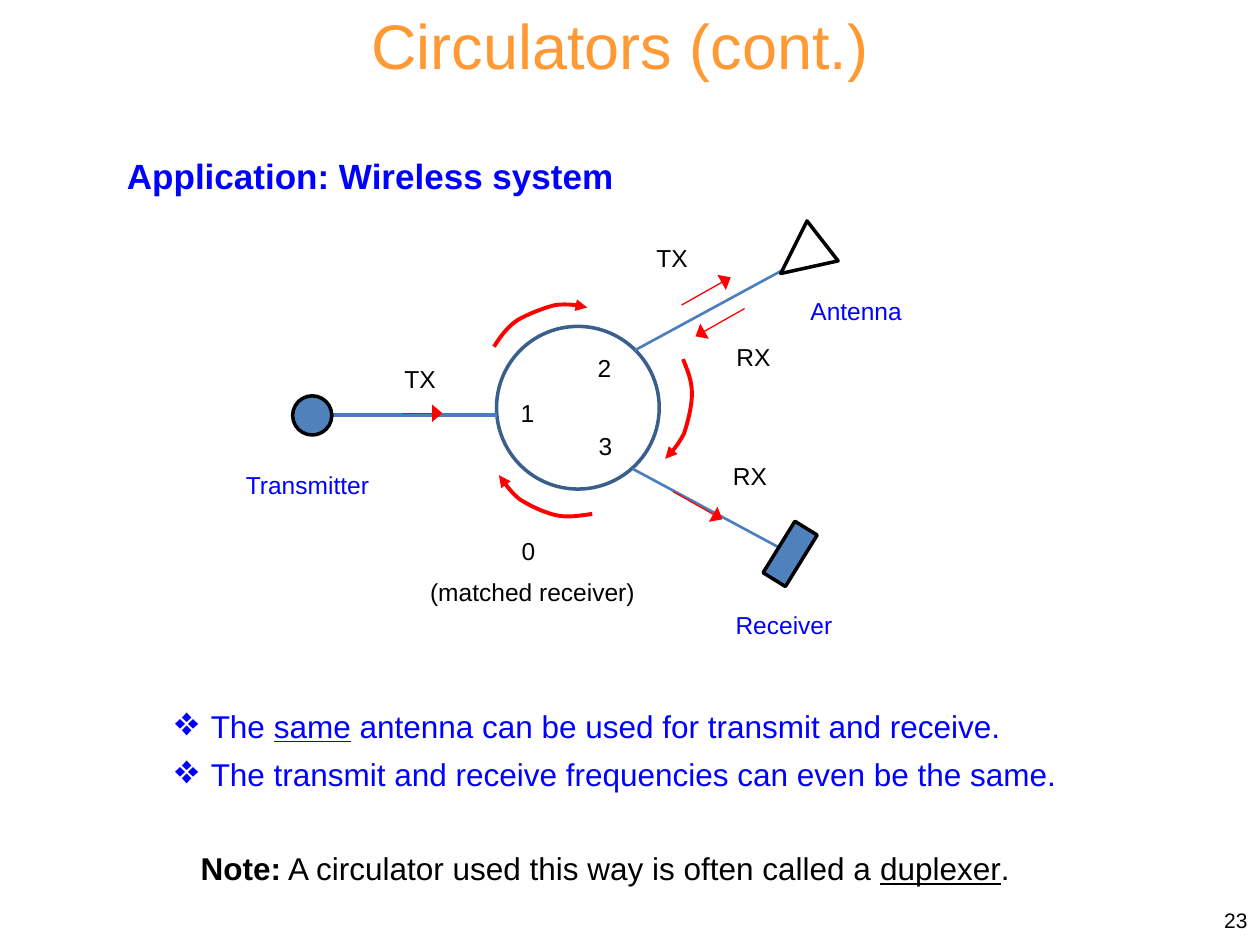
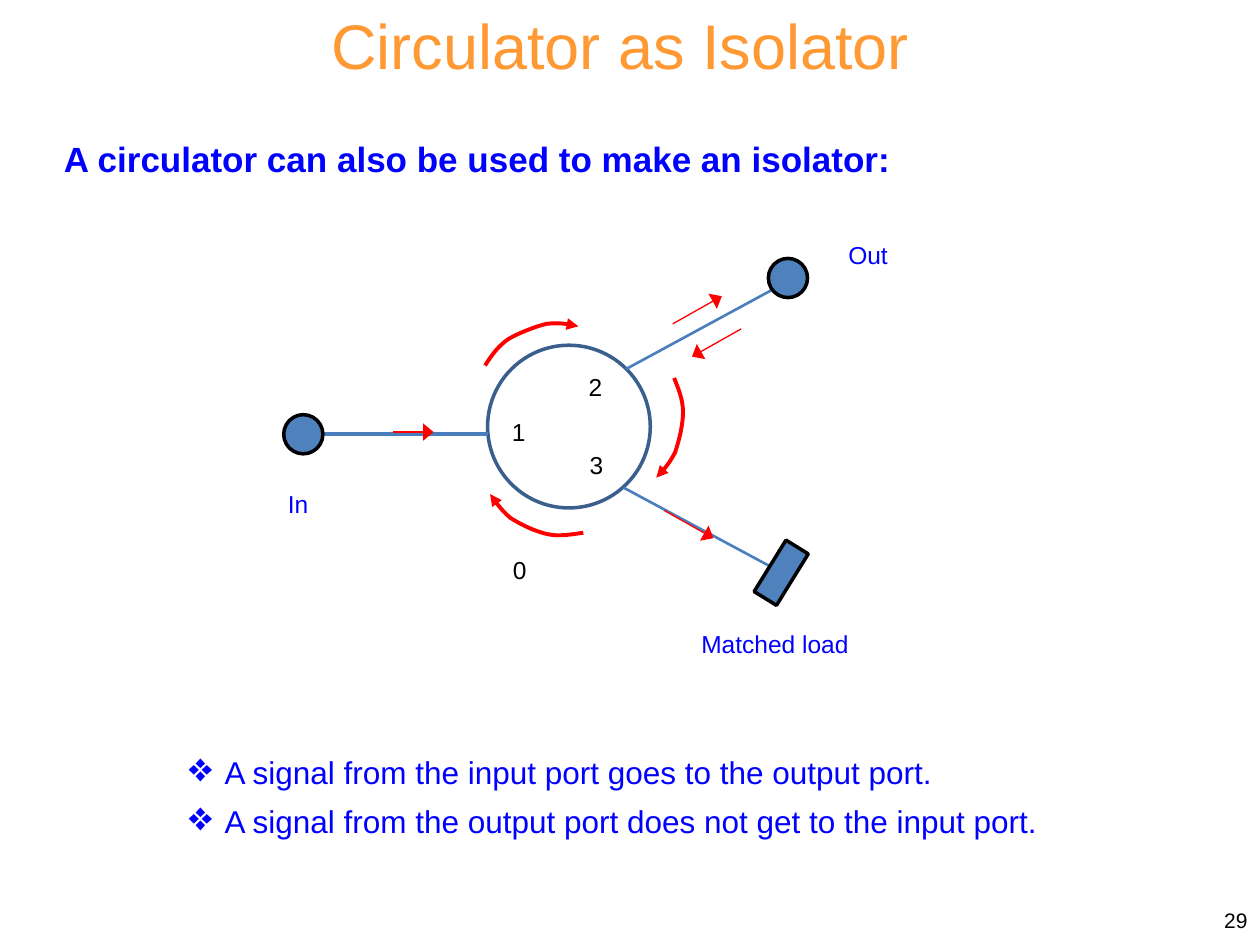
from lxml import etree
from pptx import Presentation
from pptx.dml.color import RGBColor
from pptx.enum.shapes import MSO_CONNECTOR, MSO_SHAPE
from pptx.enum.text import MSO_ANCHOR, MSO_AUTO_SIZE, PP_ALIGN
from pptx.oxml.ns import qn
from pptx.util import Cm, Pt

STRAIGHT = MSO_CONNECTOR.STRAIGHT
ELLIPSE = MSO_SHAPE.OVAL
RECTANGLE = MSO_SHAPE.RECTANGLE
TRIANGLE = MSO_SHAPE.ISOSCELES_TRIANGLE
LEFT, CENTER, RIGHT = PP_ALIGN.LEFT, PP_ALIGN.CENTER, PP_ALIGN.RIGHT
TOP, MIDDLE = MSO_ANCHOR.TOP, MSO_ANCHOR.MIDDLE
FIT_SHAPE, NO_FIT = MSO_AUTO_SIZE.SHAPE_TO_FIT_TEXT, MSO_AUTO_SIZE.NONE

FONT = "Arial"
COLORS = {
    "title": "FF9933",
    "blue": "0000FF",
    "black": "000000",
    "white": "FFFFFF",
    "ring": "3A5F8C",
    "wire": "4B7EBC",
    "port": "4F81BD",
    "signal": "FF0000",
}
TITLE_CENTER = 12.5
LABEL_HEIGHT = 0.86
PORT_SIZE = 0.79
BULLET_INDENT = 0.72
BULLET_SCALE = "130000"
CURVE_STEPS = 8

WIRES = [
    ((0, 1.78), (-3.35, 1.78), 2.25),
    ((2.79, 0.48), (5.74, -1.12), 1.5),
    ((2.74, 2.87), (5.72, 4.47), 1.5),
]
SIGNALS = [
    ((-1.9, 1.75), (-1.09, 1.75)),
    ((3.73, -0.43), (4.72, -0.99)),
    ((3.56, 3.33), (4.55, 3.89)),
]
ROTATION_CURVES = [
    [(-0.05, 0.41), (0.08, 0.2), (0.23, 0), (0.43, -0.13), (0.64, -0.25),
     (0.97, -0.38), (1.19, -0.43), (1.42, -0.46), (1.63, -0.43), (1.83, -0.38)],
    [(3.76, 0.66), (3.84, 0.86), (3.94, 1.09), (3.94, 1.35), (3.94, 1.6),
     (3.86, 1.93), (3.78, 2.16), (3.68, 2.36), (3.56, 2.51), (3.4, 2.67)],
    [(1.93, 3.78), (1.7, 3.81), (1.45, 3.86), (1.22, 3.81), (0.97, 3.76),
     (0.66, 3.61), (0.46, 3.48), (0.28, 3.33), (0.18, 3.18), (0.05, 3)],
]
PORT_NUMBERS = [("1", 0.23, 1.32), ("2", 1.78, 0.41), ("3", 1.8, 1.98)]


def color(name):
    return RGBColor.from_string(COLORS[name])


def add_text(shapes, box, paragraphs, size=14, fill="black", bold=False, align=CENTER,
             anchor=TOP, wrap=False, bullet=None, space_after=0):
    shape = shapes.add_textbox(*map(Cm, box))
    frame = shape.text_frame
    frame.word_wrap = wrap
    frame.auto_size = NO_FIT if wrap else FIT_SHAPE
    frame.vertical_anchor = anchor
    for index, runs in enumerate(paragraphs):
        paragraph = frame.paragraphs[0] if index == 0 else frame.add_paragraph()
        paragraph.alignment = align
        if index < len(paragraphs) - 1:
            paragraph.space_after = Pt(space_after)
        if bullet:
            properties = paragraph._p.get_or_add_pPr()
            properties.set("marL", str(Cm(BULLET_INDENT)))
            properties.set("indent", str(-Cm(BULLET_INDENT)))
            etree.SubElement(properties, qn("a:buSzPct")).set("val", BULLET_SCALE)
            etree.SubElement(properties, qn("a:buChar")).set("char", bullet)
        for text, emphasis in [(runs, {})] if isinstance(runs, str) else runs:
            run = paragraph.add_run()
            run.text = text
            run.font.name = FONT
            run.font.size = Pt(size)
            run.font.color.rgb = color(fill)
            run.font.bold = emphasis.get("bold", bold)
            run.font.underline = emphasis.get("underline", False)


def style_line(shape, line_color, width, arrow_width=None):
    shape.line.color.rgb = color(line_color)
    shape.line.width = Pt(width)
    if arrow_width:
        head = etree.SubElement(shape.line._get_or_add_ln(), qn("a:tailEnd"))
        head.set("type", "triangle")
        head.set("w", arrow_width)


def add_line(shapes, start, end, line_color, width, arrow_width=None):
    line = shapes.add_connector(STRAIGHT, *map(Cm, (*start, *end)))
    style_line(line, line_color, width, arrow_width)
    etree.SubElement(line._element.spPr, qn("a:effectLst"))


def add_symbol(shapes, kind, box, fill=None, line_color="black", rotation=0):
    shape = shapes.add_shape(kind, *map(Cm, box))
    shape.shadow.inherit = False
    shape.rotation = rotation
    if fill:
        shape.fill.solid()
        shape.fill.fore_color.rgb = color(fill)
    else:
        shape.fill.background()
    style_line(shape, line_color, 2)


def bezier_point(controls, t):
    weights = ((1 - t) ** 3, 3 * t * (1 - t) ** 2, 3 * t ** 2 * (1 - t), t ** 3)
    return tuple(sum(w * point[axis] for w, point in zip(weights, controls)) for axis in (0, 1))


def add_curved_arrow(shapes, points):
    samples = [
        bezier_point(points[first:first + 4], step / CURVE_STEPS)
        for first in range(0, len(points) - 1, 3)
        for step in range(1, CURVE_STEPS + 1)
    ]
    builder = shapes.build_freeform(*map(Cm, points[0]))
    builder.add_line_segments([(Cm(x), Cm(y)) for x, y in samples], close=False)
    curve = builder.convert_to_shape()
    curve.shadow.inherit = False
    curve.fill.background()
    style_line(curve, "signal", 2.25, arrow_width="med")


def add_circulator(slide, left, top, reflected_start, labels, antenna):
    shapes = slide.shapes.add_group_shape().shapes

    def place(point):
        return left + point[0], top + point[1]

    add_symbol(shapes, ELLIPSE, (left, top, 3.28, 3.28), line_color="ring")
    for start, end, width in WIRES:
        add_line(shapes, place(start), place(end), "wire", width)
    add_symbol(shapes, ELLIPSE, (*place((-4.11, 1.4)), PORT_SIZE, PORT_SIZE), "port")
    add_symbol(shapes, RECTANGLE, (*place((5.31, 4.32)), 1.22, 0.53), "port", rotation=301.7)
    if antenna:
        add_symbol(shapes, TRIANGLE, (*place((5.64, -1.93)), 1.02, 1.07), "white", rotation=232.1)
    else:
        add_symbol(shapes, ELLIPSE, (*place((5.66, -1.75)), PORT_SIZE, PORT_SIZE), "port")
    for points in ROTATION_CURVES:
        add_curved_arrow(shapes, [place(point) for point in points])
    x, y = reflected_start
    for start, end in SIGNALS + [((x, y), (x - 0.99, y + 0.56))]:
        add_line(shapes, place(start), place(end), "signal", 0.75, arrow_width="lg")
    for number, x, y in PORT_NUMBERS + [("0", 0.25, 4.11)]:
        add_text(shapes, (*place((x, y)), 0.79, LABEL_HEIGHT), [number])
    for text, x, y, width, fill in labels:
        add_text(shapes, (*place((x, y)), width, LABEL_HEIGHT), [text], fill=fill)


def add_base_slide(presentation, title, title_width, number):
    slide = presentation.slides.add_slide(presentation.slide_layouts[6])
    add_text(slide.shapes, (TITLE_CENTER - title_width / 2, 0, title_width, 1.8), [title],
             size=36, fill="title")
    add_text(slide.shapes, (19.48, 18.03, 5.92, 1.02), [number], size=12, align=RIGHT,
             anchor=MIDDLE, wrap=True)
    return slide


def add_heading(slide, left, top, width, text):
    add_text(slide.shapes, (left, top, width, 1.12), [text], size=20, fill="blue",
             bold=True, align=LEFT, wrap=width > 15)


def add_bullets(slide, left, top, width, paragraphs):
    add_text(slide.shapes, (left, top, width, 2.01), paragraphs, size=18, fill="blue",
             align=LEFT, wrap=True, bullet="❖", space_after=6)


def build_wireless_slide(presentation):
    slide = add_base_slide(presentation, "Circulators (cont.)", 10.62, "23")
    add_heading(slide, 2.31, 3, 10.39, "Application: Wireless system")
    labels = [
        ("Antenna", 6.07, -0.74, 2.36, "blue"),
        ("Transmitter", -5.31, 2.77, 3, "blue"),
        ("Receiver", 4.55, 5.59, 2.49, "blue"),
        ("TX", -2.11, 0.64, 1.14, "black"),
        ("TX", 2.97, -1.8, 1.14, "black"),
        ("RX", 4.57, 0.2, 1.22, "black"),
        ("RX", 4.5, 2.59, 1.22, "black"),
        ("(matched receiver)", -1.6, 4.93, 4.65, "black"),
    ]
    add_circulator(slide, 10.01, 6.58, (5, -0.36), labels, antenna=True)
    add_bullets(slide, 3.28, 14.12, 18.95, [
        [("The ", {}), ("same", {"underline": True}),
         (" antenna can be used for transmit and receive.", {})],
        "The transmit and receive frequencies can even be the same.",
    ])
    add_text(slide.shapes, (3.73, 16.99, 16.94, 1.02), [
        [("Note:", {"bold": True}), (" A circulator used this way is often called a ", {}),
         ("duplexer", {"underline": True}), (".", {})],
    ], size=18)


def build_isolator_slide(presentation):
    slide = add_base_slide(presentation, "Circulator as Isolator", 12.27, "29")
    add_heading(slide, 1.04, 2.64, 17.78, "A circulator can also be used to make an isolator:")
    labels = [
        ("In", -4.42, 2.77, 1.2, "blue"),
        ("Matched load", 4.04, 5.59, 3.51, "blue"),
        ("Out", 6.97, -2.24, 1.4, "blue"),
    ]
    add_circulator(slide, 9.83, 6.96, (5.11, -0.33), labels, antenna=False)
    add_bullets(slide, 3.56, 15.06, 18.11, [
        "A signal from the input port goes to the output port.",
        "A signal from the output port does not get to the input port.",
    ])


def main():
    presentation = Presentation()
    presentation.slide_width = Cm(25.4)
    presentation.slide_height = Cm(19.05)
    build_wireless_slide(presentation)
    build_isolator_slide(presentation)
    presentation.save("out.pptx")


if __name__ == "__main__":
    main()
